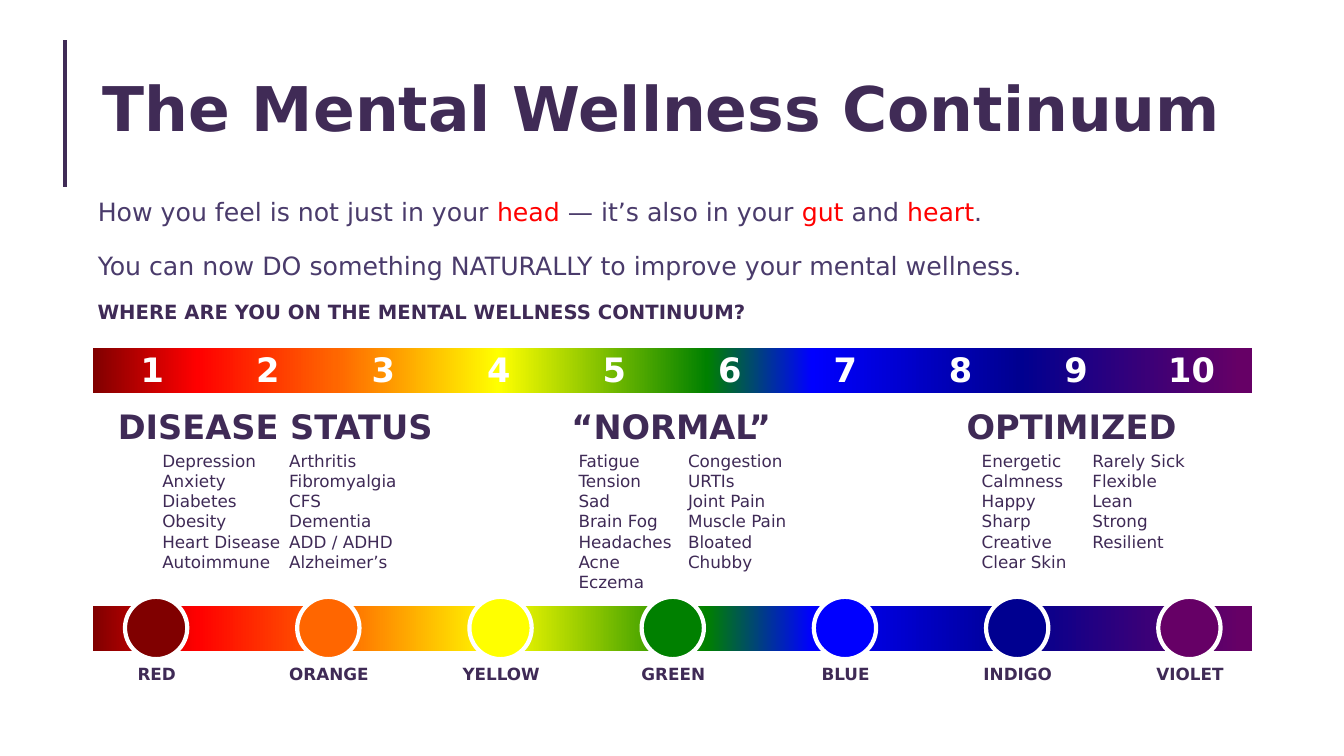
from dataclasses import dataclass

from lxml import etree
from pptx import Presentation
from pptx import util as u
from pptx.dml.color import RGBColor
from pptx.enum import shapes, text
from pptx.oxml.ns import qn


@dataclass(frozen=True)
class Theme:
    font: str = "DejaVu Sans"
    title_ink: str = "402B56"
    ink: str = "3F2A56"
    body_ink: str = "4A3B6B"
    accent: str = "FF0000"
    white: str = "FFFFFF"
    title_size: int = 44
    heading_size: int = 24
    body_size: int = 18
    question_size: int = 14
    small_size: int = 12
    line_width: int = 3


THEME = Theme()
LEFT, CENTER = text.PP_ALIGN.LEFT, text.PP_ALIGN.CENTER

# Gradient stops: position in percent, colour
SPECTRUM = [(0, "800000"), (9, "FF0000"), (21, "FF6600"), (35, "FFFF00"),
            (53, "008000"), (62, "0000FF"), (80, "000090"), (99, "660066")]

# Label and colour of each dot on the lower bar
DOTS = [("RED", "800000"), ("ORANGE", "FF6600"), ("YELLOW", "FFFF00"),
        ("GREEN", "008000"), ("BLUE", "0000FF"), ("INDIGO", "000090"),
        ("VIOLET", "660066")]

# Heading, its left edge, and its columns as (left, width, items)
STATES = [
    ("DISEASE STATUS", 1.6, [
        (3.84, 3.48, ["Depression", "Anxiety", "Diabetes", "Obesity",
                      "Heart Disease", "Autoimmune"]),
        (7.04, 3.3, ["Arthritis", "Fibromyalgia", "CFS", "Dementia",
                     "ADD / ADHD", "Alzheimer’s"])]),
    ("“NORMAL”", 11.58, [
        (14.33, 2.95, ["Fatigue", "Tension", "Sad", "Brain Fog",
                       "Headaches", "Acne", "Eczema"]),
        (17.09, 3.3, ["Congestion", "URTIs", "Joint Pain", "Muscle Pain",
                      "Bloated", "Chubby"])]),
    ("OPTIMIZED", 21.67, [
        (24.49, 2.72, ["Energetic", "Calmness", "Happy", "Sharp",
                       "Creative", "Clear Skin"]),
        (27.28, 3.12, ["Rarely Sick", "Flexible", "Lean", "Strong",
                       "Resilient"])]),
]

# Body paragraphs as runs of (words, colour)
BODY = [
    [("How you feel is not just in your ", THEME.body_ink),
     ("head", THEME.accent),
     (" — it’s also in your ", THEME.body_ink),
     ("gut", THEME.accent),
     (" and ", THEME.body_ink),
     ("heart", THEME.accent),
     (".", THEME.body_ink)],
    [("You can now DO something NATURALLY to improve your mental wellness.",
      THEME.body_ink)],
]


def add_span(para, words, size, color, bold=False):
    span = para.add_run()
    span.text = words
    span.font.name = THEME.font
    span.font.size = u.Pt(size)
    span.font.bold = bold
    span.font.color.rgb = RGBColor.from_string(color)


def add_text(page, area, lines, size, color=THEME.ink, bold=False, align=LEFT):
    box = page.shapes.add_textbox(*map(u.Cm, area))
    frame = box.text_frame
    frame.word_wrap = True
    for index, line in enumerate(lines):
        para = frame.add_paragraph() if index else frame.paragraphs[0]
        para.alignment = align
        add_span(para, line, size, color, bold)


def place(holder, area):
    holder.left, holder.top, holder.width, holder.height = map(u.Cm, area)
    holder.text_frame.auto_size = text.MSO_AUTO_SIZE.NONE
    return holder.text_frame


def add_title(page):
    frame = place(page.shapes.title, (2.34, 1.4, 29.21, 3.68))
    frame.vertical_anchor = text.MSO_ANCHOR.MIDDLE
    frame.margin_bottom = u.Cm(1)
    para = frame.paragraphs[0]
    para.alignment = LEFT
    para.line_spacing = 0.9
    add_span(para, "The Mental Wellness Continuum", THEME.title_size,
             THEME.title_ink, True)


def add_body(page):
    frame = place(page.placeholders[1], (2.21, 4.9, 31.57, 3.1))
    frame.vertical_anchor = text.MSO_ANCHOR.TOP
    for index, spans in enumerate(BODY):
        para = frame.add_paragraph() if index else frame.paragraphs[0]
        para.line_spacing = 0.9
        para.space_before = u.Pt(19.5 if index else 0)
        props = para._p.get_or_add_pPr()
        props.set("marL", "0")
        props.set("indent", "0")
        etree.SubElement(props, qn("a:buNone"))
        for words, color in spans:
            add_span(para, words, THEME.body_size, color)


def add_rule(page, left, top, bottom):
    rule = page.shapes.add_connector(
        shapes.MSO_CONNECTOR.STRAIGHT,
        u.Cm(left), u.Cm(top), u.Cm(left), u.Cm(bottom))
    rule.line.color.rgb = RGBColor.from_string(THEME.title_ink)
    rule.line.width = u.Pt(THEME.line_width)
    etree.SubElement(rule._element.spPr, qn("a:effectLst"))


def add_bar(page, top):
    bar = page.shapes.add_shape(shapes.MSO_SHAPE.RECTANGLE,
                                *map(u.Cm, (2.34, top, 29.21, 1.14)))
    bar.shadow.inherit = False
    bar.line.fill.background()
    bar.fill.gradient()
    bar.fill.gradient_angle = 0
    stops = bar._element.spPr.find(qn("a:gradFill")).find(qn("a:gsLst"))
    for stop in list(stops):
        stops.remove(stop)
    for percent, color in SPECTRUM:
        stop = etree.SubElement(stops, qn("a:gs"), pos=str(percent * 1000))
        etree.SubElement(stop, qn("a:srgbClr"), val=color)


def add_dot(page, left, color):
    dot = page.shapes.add_shape(shapes.MSO_SHAPE.OVAL,
                                *map(u.Cm, (left, 15.04, 1.57, 1.57)))
    dot.shadow.inherit = False
    dot.fill.solid()
    dot.fill.fore_color.rgb = RGBColor.from_string(color)
    dot.line.color.rgb = RGBColor.from_string(THEME.white)
    dot.line.width = u.Pt(THEME.line_width)


def main():
    deck = Presentation()
    deck.slide_width, deck.slide_height = u.Cm(33.87), u.Cm(19.05)
    page = deck.slides.add_slide(deck.slide_layouts[1])

    # Title and introduction
    add_rule(page, 1.63, 1.02, 4.7)
    add_title(page)
    add_body(page)
    add_text(page, (2.21, 7.44, 29.21, 0.86),
             ["WHERE ARE YOU ON THE MENTAL WELLNESS CONTINUUM?"],
             THEME.question_size, bold=True)

    # Numbered scale
    add_bar(page, 8.76)
    for index in range(10):
        add_text(page, (2.95 + 2.91 * index, 8.66, 1.78, 1.27),
                 [str(index + 1)], THEME.heading_size, THEME.white, True, CENTER)

    # States of health
    for heading, heading_left, columns in STATES:
        add_text(page, (heading_left, 10.11, 10.67, 1.27), [heading],
                 THEME.heading_size, bold=True, align=CENTER)
        for left, width, items in columns:
            add_text(page, (left, 11.23, width, 0.25 + 0.51 * len(items)),
                     items, THEME.small_size)

    # Colour scale
    add_bar(page, 15.27)
    for index, (label, color) in enumerate(DOTS):
        offset = 4.34 * index
        add_dot(page, 3.15 + offset, color)
        add_text(page, (2.54 + offset, 16.59, 2.82, 0.76), [label],
                 THEME.small_size, bold=True, align=CENTER)

    deck.save("out.pptx")


if __name__ == "__main__":
    main()
